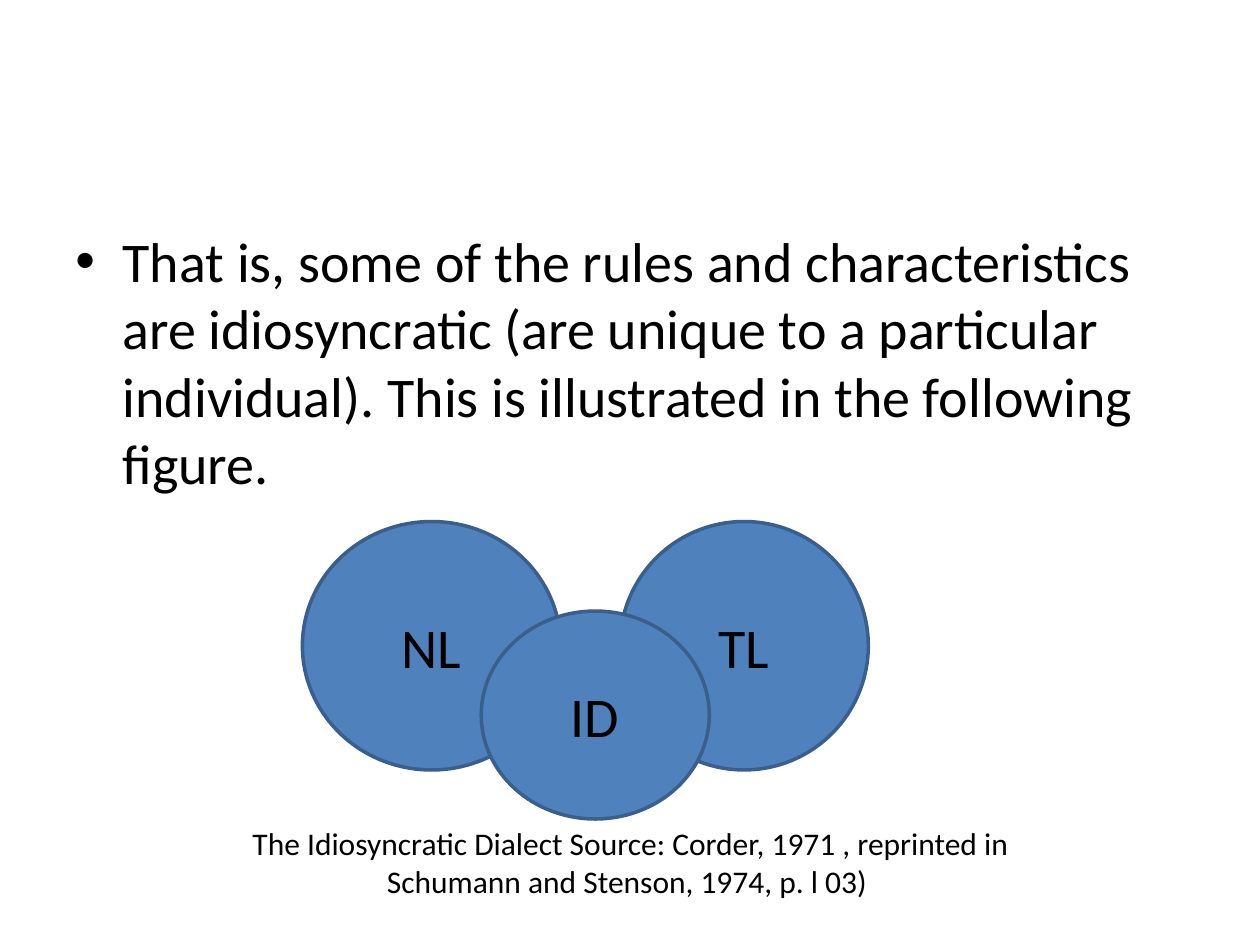
from typing import NamedTuple

from lxml.etree import SubElement
from pptx import Presentation
from pptx.dml.color import RGBColor
from pptx.enum.shapes import MSO_SHAPE as Preset
from pptx.enum.text import MSO_ANCHOR as Anchor, PP_ALIGN as Align
from pptx.oxml.ns import qn
from pptx.util import Pt


class Box(NamedTuple):
    left: float
    top: float
    width: float
    height: float

    def lengths(self) -> list:
        return [Pt(value) for value in self]


class Language(NamedTuple):
    label: str
    box: Box


STATEMENT = (
    "That is, some of the rules and characteristics are idiosyncratic "
    "(are unique to a particular individual). This is illustrated in the "
    "following figure."
)
SOURCE = (
    "The Idiosyncratic Dialect Source: Corder, 1971 , reprinted in "
    "Schumann and Stenson, 1974, p. l 03) "
)
LANGUAGES = [
    Language("NL", Box(172.8, 298, 147.6, 142)),
    Language("TL", Box(354.2, 298, 142, 142)),
    Language("ID", Box(275, 349.2, 130.3, 118.8)),
]


def color(hex_code: str) -> RGBColor:
    return RGBColor.from_string(hex_code)


def write(shape, text: str, *, size: float = 32, align=Align.CENTER,
          anchor=Anchor.TOP, bullet: str = "", indent: float = 0) -> None:
    frame = shape.text_frame
    frame.word_wrap = True
    frame.vertical_anchor = anchor
    paragraph = frame.paragraphs[0]
    paragraph.alignment = align
    run = paragraph.add_run()
    run.text = text
    run.font.name = "Calibri"
    run.font.size = Pt(size)
    run.font.color.rgb = color("000000")
    if bullet:
        properties = paragraph._p.get_or_add_pPr()
        properties.set("marL", str(Pt(indent)))
        properties.set("indent", str(-Pt(indent)))
        SubElement(properties, qn("a:buFont"), typeface="Arial")
        SubElement(properties, qn("a:buChar"), char=bullet)


def draw_language(slide, language: Language) -> None:
    circle = slide.shapes.add_shape(
        Preset.FLOWCHART_CONNECTOR, *language.box.lengths())
    circle.shadow.inherit = False
    circle.fill.solid()
    circle.fill.fore_color.rgb = color("4F81BD")
    circle.line.color.rgb = color("3A5F8C")
    circle.line.width = Pt(2)
    write(circle, language.label, anchor=Anchor.MIDDLE)


def main() -> None:
    deck = Presentation()
    deck.slide_width, deck.slide_height = Pt(720), Pt(540)
    slide = deck.slides.add_slide(deck.slide_layouts[6])

    statement = slide.shapes.add_textbox(*Box(36, 126, 648, 356.4).lengths())
    write(statement, STATEMENT, align=Align.LEFT, bullet="•", indent=27)

    for language in LANGUAGES:
        draw_language(slide, language)

    source = slide.shapes.add_textbox(*Box(110.9, 467.3, 499, 51).lengths())
    write(source, SOURCE, size=18)

    deck.save("out.pptx")


if __name__ == "__main__":
    main()
